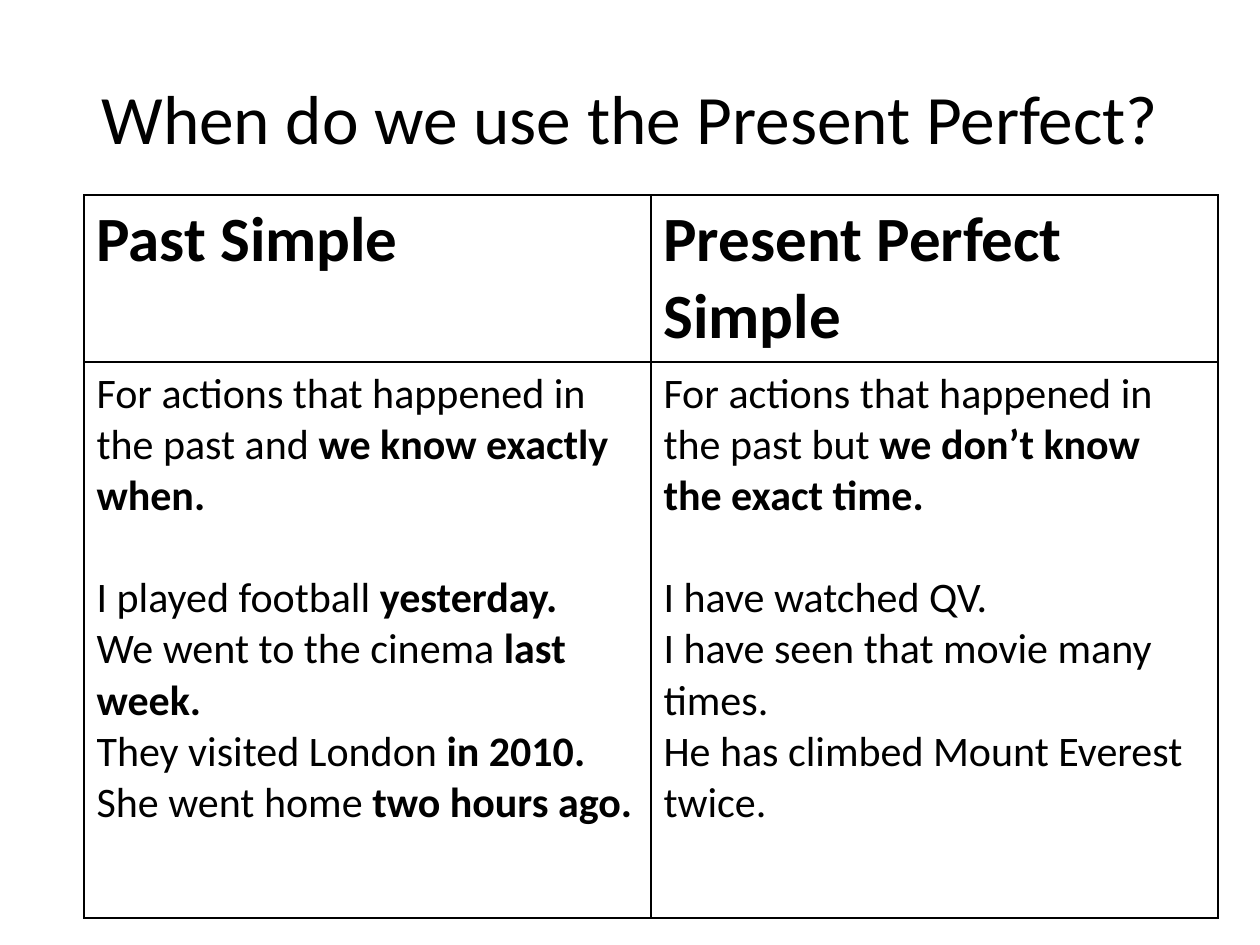
import lxml.etree
import pptx
import pptx.dml.color
import pptx.enum.text
import pptx.oxml.ns
import pptx.util

SCALE = 914400 // 126
FONT = "Calibri"
BLACK = "000000"

HEADS = ["Past Simple", "Present Perfect Simple"]
# Each line is a (plain, bold) pair; the first is the rule, the rest examples.
PAST = [
    ("For actions that happened in the past and ", "we know exactly when."),
    ("I played football ", "yesterday."),
    ("We went to the cinema ", "last week."),
    ("They visited London ", "in 2010."),
    ("She went home ", "two hours ago."),
]
PERFECT = [
    ("For actions that happened in the past but ", "we don’t know the exact time."),
    ("I have watched QV.", ""),
    ("I have seen that movie many times.", ""),
    ("He has climbed Mount Everest twice.", ""),
]


def px(count):
    return pptx.util.Emu(count * SCALE)


def color(code):
    return pptx.dml.color.RGBColor.from_string(code)


class Deck:
    def __init__(self):
        self.file = pptx.Presentation()
        self.file.slide_width = px(1260)
        self.file.slide_height = px(945)
        self.slide = self.file.slides.add_slide(self.file.slide_layouts[5])

    def run(self, para, text, size, bold=False):
        run = para.add_run()
        run.text = text
        font = run.font
        font.name = FONT
        font.size = pptx.util.Pt(size)
        font.bold = bold
        font.color.rgb = color(BLACK)

    def title(self, text, left, top, width, height):
        shape = self.slide.shapes.title
        shape.left, shape.top = px(left), px(top)
        shape.width, shape.height = px(width), px(height)
        frame = shape.text_frame
        frame.word_wrap = True
        frame.vertical_anchor = pptx.enum.text.MSO_ANCHOR.MIDDLE
        para = frame.paragraphs[0]
        para.alignment = pptx.enum.text.PP_ALIGN.CENTER
        self.run(para, text, 39.6)

    def table(self, left, top, cols, rows):
        frame = self.slide.shapes.add_table(
            len(rows), len(cols), px(left), px(top), px(sum(cols)), px(sum(rows)))
        table = frame.table
        for col, width in zip(table.columns, cols):
            col.width = px(width)
        for row, height in zip(table.rows, rows):
            row.height = px(height)
        for cell in table.iter_cells():
            cell.fill.background()
            self.border(cell)
        return table

    def border(self, cell):
        """Draw a thin line on all four sides of the cell."""
        props = cell._tc.get_or_add_tcPr()
        name = pptx.oxml.ns.qn
        for spot, side in enumerate(["a:lnL", "a:lnR", "a:lnT", "a:lnB"]):
            line = lxml.etree.Element(name(side), w=str(pptx.util.Pt(1)))
            fill = lxml.etree.SubElement(line, name("a:solidFill"))
            lxml.etree.SubElement(fill, name("a:srgbClr"), val=BLACK)
            props.insert(spot, line)

    def lines(self, cell, pairs):
        """Fill a cell with plain and bold runs, one blank line high gap after the rule."""
        frame = cell.text_frame
        for index, (plain, bold) in enumerate(pairs):
            para = frame.add_paragraph() if index else frame.paragraphs[0]
            if index == 1:
                para.space_before = pptx.util.Pt(29)
            self.run(para, plain, 24)
            if bold:
                self.run(para, bold, 24, True)


def main():
    deck = Deck()
    deck.title("When do we use the Present Perfect?", 63, 38, 1134, 157)
    table = deck.table(84, 195, [567, 567], [167, 556])
    for col, (head, pairs) in enumerate(zip(HEADS, [PAST, PERFECT])):
        deck.run(table.cell(0, col).text_frame.paragraphs[0], head, 36, True)
        deck.lines(table.cell(1, col), pairs)
    deck.file.save("out.pptx")


if __name__ == "__main__":
    main()
